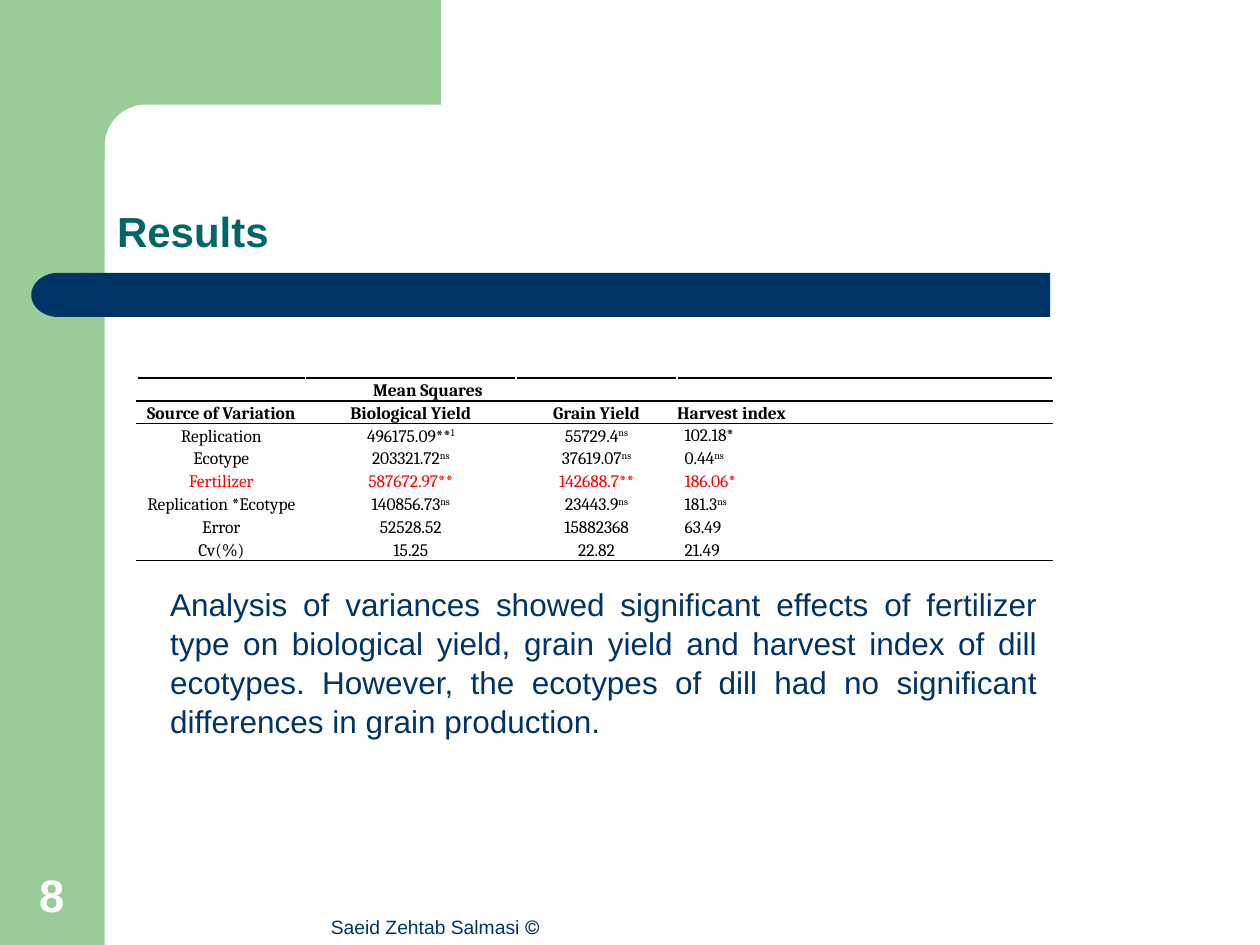
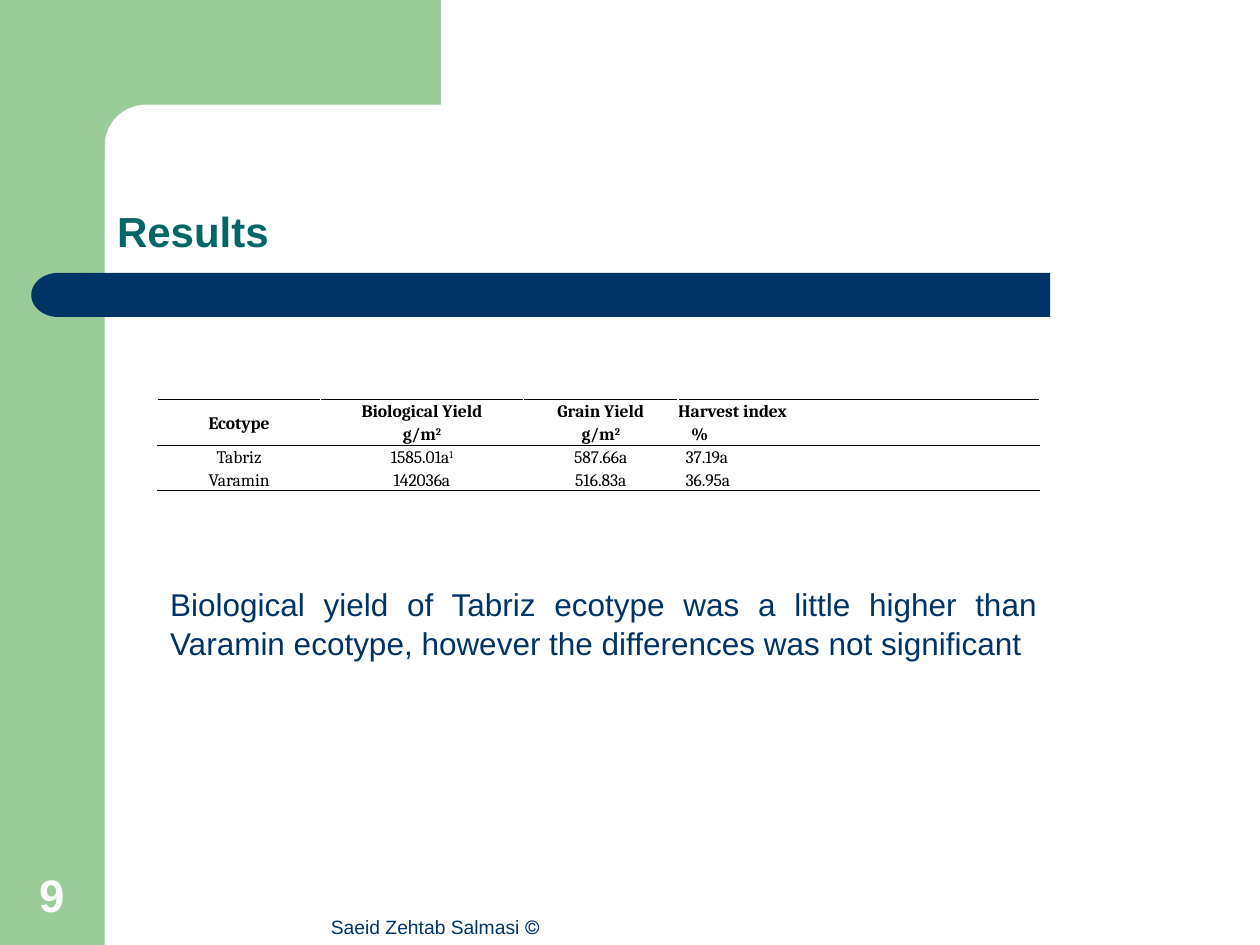
import math
from dataclasses import dataclass

from lxml import etree
from pptx import Presentation
from pptx import util as u
from pptx.dml.color import RGBColor
from pptx.enum import shapes, text
from pptx.oxml.ns import qn


@dataclass(frozen=True)
class Theme:
    green: str = "99CC99"
    navy: str = "003366"
    teal: str = "006666"
    white: str = "FFFFFF"
    black: str = "000000"
    red: str = "FF0000"
    font: str = "Arial"
    table_font: str = "Cambria"
    title_size: int = 24
    body_size: int = 18
    number_size: int = 26
    footer_size: int = 11
    table_size: int = 10
    row_spacing: int = 13
    thick: float = 1
    thin: float = 0.5


THEME = Theme()
ALIGN = text.PP_ALIGN
ANCHOR = text.MSO_ANCHOR
FOOTER = "© Saeid Zehtab Salmasi"
ROW_HEIGHT = 0.46

VARIANCE_ROWS = [
    ["", "Mean Squares", "", ""],
    ["Source of Variation", "Biological Yield", "Grain Yield", "Harvest index"],
    ["Replication", "496175.09**^1", "55729.4^ns", "102.18*"],
    ["Ecotype", "203321.72^ns", "37619.07^ns", "0.44^ns"],
    ["Fertilizer", "587672.97**", "142688.7**", "186.06*"],
    ["Replication *Ecotype", "140856.73^ns", "23443.9^ns", "181.3^ns"],
    ["Error", "52528.52", "15882368", "63.49"],
    ["Cv(%)", "15.25", "22.82", "21.49"],
]
ECOTYPE_ROWS = [
    ["Ecotype", "Biological Yield\ng/m^2", "Grain Yield\ng/m^2", "Harvest index\n%"],
    ["Tabriz", "1585.01a^1", "587.66a", "37.19a"],
    ["Varamin", "142036a", "516.83a", "36.95a"],
]
VARIANCE_NOTE = (
    "Analysis of variances showed significant effects of fertilizer type on "
    "biological yield, grain yield and harvest index of dill ecotypes. However, "
    "the ecotypes of dill had no significant differences in grain production."
)
ECOTYPE_NOTE = (
    "Biological yield of Tabriz ecotype was a little higher than Varamin ecotype, "
    "however the differences was not significant"
)


def set_attributes(target, formats):
    for name, value in formats.items():
        setattr(target, name, value)


def set_font(font, color, **formats):
    set_attributes(font, formats)
    font.color.rgb = RGBColor.from_string(color)


def paint(shape, color):
    shape.shadow.inherit = False
    shape.fill.solid()
    shape.fill.fore_color.rgb = RGBColor.from_string(color)
    shape.line.fill.background()
    return shape


def add_block(slide, kind, box, color):
    return paint(slide.shapes.add_shape(kind, *map(u.Cm, box)), color)


def add_corner(slide):
    edge, radius, steps = 2.11, 0.83, 16
    center = edge + radius
    angles = [math.pi / 2 * step / steps for step in range(steps + 1)]
    curve = [(center - radius * math.sin(angle), center - radius * math.cos(angle))
             for angle in angles]
    outline = [(8.89, 0), (8.89, edge), *curve, (edge, 3.25), (1.27, 3.25)]
    builder = slide.shapes.build_freeform(u.Cm(1.27), 0, scale=1)
    builder.add_line_segments([(u.Cm(x), u.Cm(y)) for x, y in outline], close=True)
    paint(builder.convert_to_shape(), THEME.green)


def add_text(slide, content, box, color, size, bold=False, anchor=ANCHOR.BOTTOM,
             rtl=False, **formats):
    frame = slide.shapes.add_textbox(*map(u.Cm, box)).text_frame
    set_attributes(frame, {"word_wrap": True, "vertical_anchor": anchor})
    paragraph = frame.paragraphs[0]
    set_attributes(paragraph, formats)
    if rtl:
        paragraph._p.get_or_add_pPr().set("rtl", "1")
    run = paragraph.add_run()
    run.text = content
    set_font(run.font, color, name=THEME.font, size=u.Pt(size), bold=bold)


def add_frame(slide, title, number):
    rectangle = shapes.MSO_SHAPE.RECTANGLE
    add_block(slide, rectangle, (0, 0, 2.11, 19.05), THEME.green)
    add_corner(slide)
    add_block(slide, rectangle, (1.7, 5.5, 19.47, 0.89), THEME.navy)
    cap = add_block(slide, shapes.MSO_SHAPE.FLOWCHART_DELAY, (0.63, 5.5, 1.09, 0.89), THEME.navy)
    cap.rotation = 180
    add_text(slide, FOOTER, (2.11, 17.78, 13.34, 1.27), THEME.navy, THEME.footer_size,
             rtl=True, alignment=ALIGN.CENTER)
    add_text(slide, str(number), (0.23, 17.35, 1.63, 1.35), THEME.white,
             THEME.number_size, bold=True, alignment=ALIGN.CENTER)
    add_text(slide, title, (2.11, 2.11, 21.59, 3.18), THEME.teal, THEME.title_size,
             bold=True, line_spacing=0.9)


def add_note(slide, content, height):
    add_text(slide, content, (3.18, 11.63, 17.98, height), THEME.navy, THEME.body_size,
             anchor=ANCHOR.TOP, alignment=ALIGN.JUSTIFY, line_spacing=1.04)


def add_border(cell, side, width):
    line = etree.Element(qn(f"a:{side}"), w=str(u.Pt(width)))
    fill = etree.SubElement(line, qn("a:solidFill"))
    etree.SubElement(fill, qn("a:srgbClr"), val=THEME.black)
    cell._tc.get_or_add_tcPr().insert(0, line)


def write_cell(cell, content, color, bold, centered, indents):
    cell.fill.background()
    set_attributes(cell, {
        "margin_left": 0, "margin_right": 0, "margin_top": 0, "margin_bottom": 0,
        "vertical_anchor": ANCHOR.MIDDLE if centered else ANCHOR.TOP,
    })
    frame = cell.text_frame
    for index, line in enumerate(content.split("\n")):
        paragraph = frame.add_paragraph() if index else frame.paragraphs[0]
        set_attributes(paragraph, {
            "alignment": ALIGN.CENTER if centered else ALIGN.LEFT,
            "line_spacing": u.Pt(THEME.row_spacing),
        })
        properties = paragraph._p.get_or_add_pPr()
        properties.set("marL", str(u.Cm(indents.get(line, 0))))
        if not line:
            etree.SubElement(paragraph._p, qn("a:endParaRPr"), sz=str(THEME.table_size * 100))
            continue
        for part, piece in enumerate(line.split("^")):
            run = paragraph.add_run()
            run.text = piece
            set_font(run.font, color, name=THEME.table_font,
                     size=u.Pt(THEME.table_size), bold=bold)
            if part:
                run._r.get_or_add_rPr().set("baseline", "30000")


def add_results_table(slide, rows, left, top, widths, header_rows, rules, highlight=None):
    lines = [max(content.count("\n") + 1 for content in row) for row in rows]
    table = slide.shapes.add_table(
        len(rows), len(widths), u.Cm(left), u.Cm(top),
        u.Cm(sum(widths)), u.Cm(ROW_HEIGHT * sum(lines))).table
    set_attributes(table, {"first_row": False, "horz_banding": False})
    for column, width in zip(table.columns, widths):
        column.width = u.Cm(width)
    last = len(widths) - 1
    indents = {"Mean Squares": 0.69, "%": 0.26}
    indents.update({row[last]: 0.15 for row in rows[header_rows:]})
    for index, row in enumerate(rows):
        table.rows[index].height = u.Cm(ROW_HEIGHT * lines[index])
        color = THEME.red if row[0] == highlight else THEME.black
        for position, content in enumerate(row):
            cell = table.cell(index, position)
            write_cell(cell, content, color, index < header_rows, position < last, indents)
            for side, boundary in (("lnB", index + 1), ("lnT", index)):
                if boundary in rules:
                    add_border(cell, side, rules[boundary])


def main():
    presentation = Presentation()
    set_attributes(presentation, {"slide_width": u.Cm(25.4), "slide_height": u.Cm(19.05)})
    blank = presentation.slide_layouts[6]

    variance_slide = presentation.slides.add_slide(blank)
    add_frame(variance_slide, "Results", 8)
    add_results_table(
        variance_slide, VARIANCE_ROWS, 2.76, 7.62, (3.4, 4.24, 3.25, 7.57), 2,
        {0: THEME.thick, 1: THEME.thick, 2: THEME.thin, 8: THEME.thin}, "Fertilizer")
    add_note(variance_slide, VARIANCE_NOTE, 3.33)

    ecotype_slide = presentation.slides.add_slide(blank)
    add_frame(ecotype_slide, "Results", 9)
    add_note(ecotype_slide, ECOTYPE_NOTE, 1.8)
    add_results_table(
        ecotype_slide, ECOTYPE_ROWS, 3.18, 8.05, (3.28, 4.09, 3.12, 7.29), 1,
        {0: THEME.thick, 1: THEME.thin, 3: THEME.thick})

    presentation.save("out.pptx")


if __name__ == "__main__":
    main()
